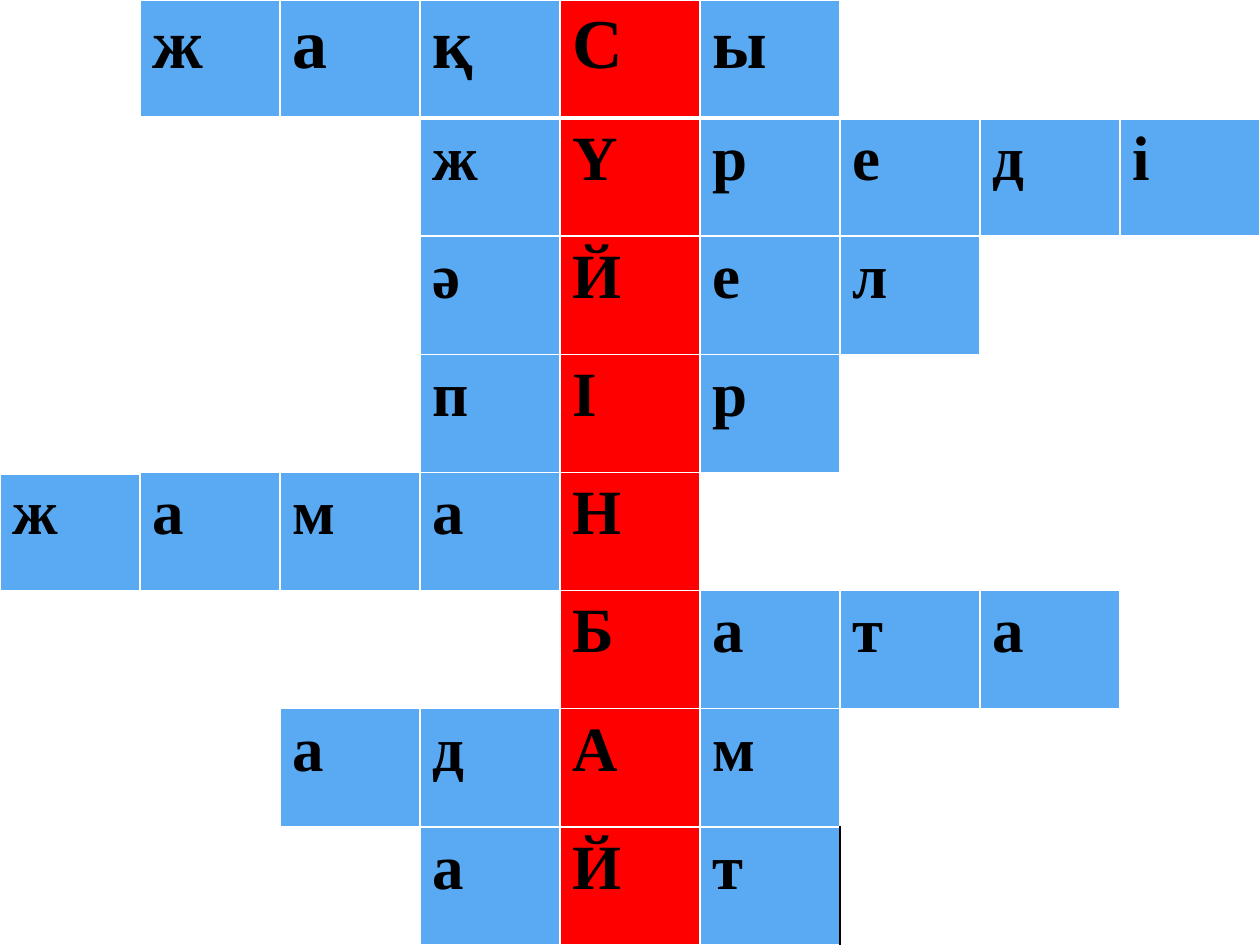
from dataclasses import dataclass
from lxml.etree import SubElement
from pptx import Presentation
from pptx.dml.color import RGBColor
from pptx.oxml.ns import qn
from pptx.util import Inches, Pt


@dataclass(frozen=True)
class Theme:
    font: str = "Times New Roman"
    ink: str = "000000"
    paper: str = "FFFFFF"
    blue: str = "59AAF2"
    red: str = "FF0000"
    first: int = 40
    size: int = 36
    thin: int = 1
    thick: int = 3


THEME = Theme()
WIDE, HIGH = 10, 7.5
COLS, KEY = 9, 4  # KEY is the column of the hidden word

# Start column and word of each row
WORDS = [
    (1, "жақСы"),
    (3, "жҮреді"),
    (3, "әЙел"),
    (3, "пІр"),
    (0, "жамаН"),
    (4, "Бата"),
    (2, "адАм"),
    (3, "аЙт"),
]

# Merged blank areas: row, column, rows, columns
GAPS = [
    (0, 0, 4, 1), (0, 6, 1, 3), (1, 1, 3, 2), (2, 7, 1, 2), (3, 6, 2, 2),
    (3, 8, 3, 1), (5, 0, 3, 1), (5, 1, 3, 1), (5, 2, 1, 2), (6, 7, 2, 2),
]


def add_edge(cell, side, color, width):
    props = cell._tc.get_or_add_tcPr()
    line = SubElement(props, qn(f"a:ln{side}"), w=str(Pt(width)))
    fill = SubElement(line, qn("a:solidFill"))
    SubElement(fill, qn("a:srgbClr"), val=color)


def paint(cell, row, col, color):
    # Edges come before the fill in the cell's properties
    last = len(WORDS) - 1
    for side in "LRTB":
        dark = (row, col, side) in {(last, 5, "R"), (last, 6, "L")}
        bold = row == 0 and side == "B"
        add_edge(cell, side, THEME.ink if dark else THEME.paper,
                 THEME.thick if bold else THEME.thin)
    cell.fill.solid()
    cell.fill.fore_color.rgb = RGBColor.from_string(color)


def write(cell, text, size):
    run = cell.text_frame.paragraphs[0].add_run()
    run.text = text
    font = run.font
    font.name, font.size, font.bold = THEME.font, Pt(size), True
    font.color.rgb = RGBColor.from_string(THEME.ink)


def add_grid(slide):
    frame = slide.shapes.add_table(len(WORDS), COLS, Inches(0), Inches(0),
                                   Inches(WIDE), Inches(HIGH))
    table = frame.table
    table.first_row = table.horz_banding = False
    for col in table.columns:
        col.width = Inches(WIDE / COLS)
    for row in table.rows:
        row.height = Inches(HIGH / len(WORDS))
    for row, col, tall, broad in GAPS:
        end = table.cell(row + tall - 1, col + broad - 1)
        table.cell(row, col).merge(end)
    return table


def fill_grid(table):
    for row, (start, word) in enumerate(WORDS):
        for col in range(COLS):
            cell = table.cell(row, col)
            if start <= col < start + len(word):
                paint(cell, row, col, THEME.red if col == KEY else THEME.blue)
                write(cell, word[col - start],
                      THEME.size if row else THEME.first)
            else:
                paint(cell, row, col, THEME.paper)


def main():
    deck = Presentation()
    deck.slide_width, deck.slide_height = Inches(WIDE), Inches(HIGH)
    slide = deck.slides.add_slide(deck.slide_layouts[6])
    # Crossword
    fill_grid(add_grid(slide))
    deck.save("out.pptx")


if __name__ == "__main__":
    main()
